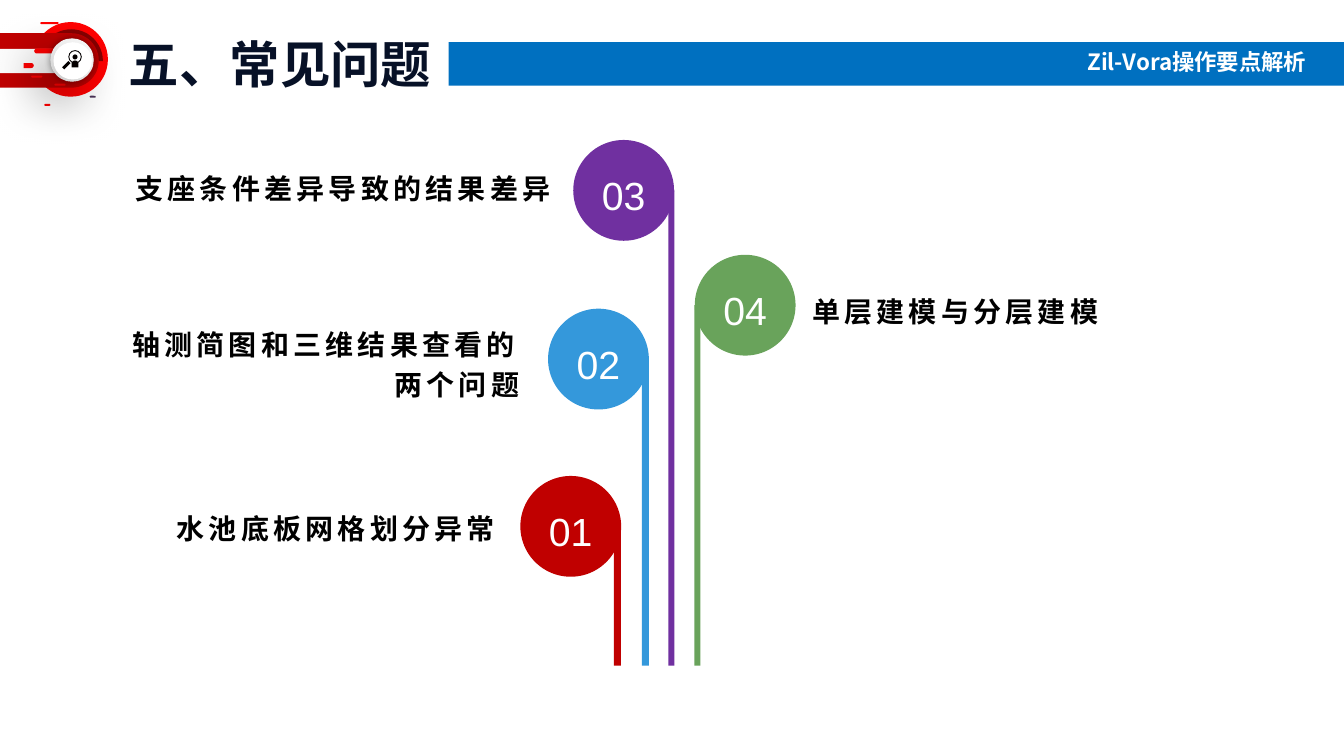
"""Build the agenda slide on common problems, with four numbered markers on stems."""
from dataclasses import dataclass

from lxml.etree import SubElement
from pptx import Presentation
from pptx.dml.color import RGBColor
from pptx.enum.shapes import MSO_SHAPE
from pptx.enum.text import MSO_ANCHOR, PP_ALIGN
from pptx.oxml.ns import qn
from pptx.util import Pt


@dataclass(frozen=True)
class Theme:
    latin: str = "Arial"
    chinese: str = "Noto Sans CJK SC"
    title_size: int = 36
    number_size: int = 28
    label_size: int = 20
    banner_size: int = 16
    title: str = "071127"
    banner: str = "0070C0"
    white: str = "FFFFFF"
    black: str = "000000"
    red: str = "FF0000"
    deep_red: str = "C00000"
    dark_red: str = "860000"
    plum: str = "4A3359"
    slot: str = "FCFCFC"
    icon: str = "040000"
    blue: str = "3498DB"
    purple: str = "7030A0"
    green: str = "69A35B"


theme = Theme()
deck = Presentation()
deck.slide_width, deck.slide_height = Pt(960), Pt(540)
page = deck.slides.add_slide(deck.slide_layouts[6])


def add_filled(kind, frame, color, turn=0, adjustments=()):
    shape = page.shapes.add_shape(kind, *map(Pt, frame))
    shape.shadow.inherit = False
    shape.fill.solid()
    shape.fill.fore_color.rgb = RGBColor.from_string(color)
    shape.line.fill.background()
    shape.rotation = turn
    for index, value in enumerate(adjustments):
        shape.adjustments[index] = value
    return shape


def write(shape, text, size, color, font, align, anchor, bold=True, leading=1.0, tracking=0):
    frame = shape.text_frame
    frame.word_wrap = True
    frame.vertical_anchor = anchor
    para = frame.paragraphs[0]
    para.text = text
    para.alignment = align
    para.line_spacing = leading
    para.font.size = Pt(size)
    para.font.bold = bold
    para.font.name = font
    para.font.color.rgb = RGBColor.from_string(color)
    defaults = para._p.pPr.find(qn("a:defRPr"))
    defaults.set("spc", str(tracking * 100))
    SubElement(defaults, qn("a:ea"), typeface=theme.chinese)


pill, capsule = MSO_SHAPE.ROUNDED_RECTANGLE, MSO_SHAPE.ROUND_2_SAME_RECTANGLE
emblem = [
    (MSO_SHAPE.OVAL, (23.8, 15.8, 53.3, 53.3), theme.red, 0, ()),
    (pill, (64.1, 68.4, 4.3, 1.4), theme.plum, 0, (0.5,)),
    (pill, (31.7, 74.2, 4.3, 1.4), theme.red, 0, (0.5,)),
    (MSO_SHAPE.PIE, (28.1, 20.9, 45.4, 45.4), theme.dark_red, 180, (0, 108)),
    (pill, (28.8, 15.8, 13, 1.4), theme.red, 0, (0.5,)),
    (capsule, (15.8, 7.9, 38.9, 70.6), theme.deep_red, 90, (0.5, 0)),
    (capsule, (20.9, 13.7, 17.3, 59.8), theme.slot, 90, (0.5, 0)),
    (capsule, (18.7, 43.2, 3.6, 7.2), theme.red, 90, (0.5, 0)),
    (pill, (24.5, 34.6, 21.6, 3.6), theme.red, 0, (0.5,)),
    (pill, (22.3, 54, 7.9, 1.4), theme.red, 0, (0.5,)),
    (pill, (38.9, 59.8, 7.9, 1.4), theme.red, 0, (0.5,)),
]
for part in emblem:
    add_filled(*part)

buttons = [((36, 27.4, 31, 31), 40, 5, 0, 0), ((38.2, 30.2, 27.4, 26.6), 60, 37, 16, 130)]
for frame, opacity, blur, distance, angle in buttons:
    button = add_filled(MSO_SHAPE.OVAL, frame, theme.white)
    effects = button._element.spPr.find(qn("a:effectLst"))
    shadow = SubElement(effects, qn("a:outerShdw"), blurRad=str(Pt(blur)),
                        dist=str(Pt(distance)), dir=str(angle * 60000), algn="ctr", rotWithShape="0")
    tint = SubElement(shadow, qn("a:srgbClr"), val=theme.black)
    SubElement(tint, qn("a:alpha"), val=str(opacity * 1000))

title = page.shapes.add_textbox(Pt(85), Pt(20.2), Pt(280), Pt(94.3))
write(title, "五、常见问题", theme.title_size, theme.title, theme.chinese, PP_ALIGN.LEFT, MSO_ANCHOR.TOP)
add_filled(MSO_SHAPE.RECTANGLE, (320.4, 30.2, 639.6, 31), theme.banner)
banner = page.shapes.add_textbox(Pt(750.2), Pt(31), Pt(209.5), Pt(26.6))
write(banner, "Zil-Vora操作要点解析", theme.banner_size, theme.white, theme.chinese,
      PP_ALIGN.CENTER, MSO_ANCHOR.TOP)

seeker = [
    (MSO_SHAPE.OVAL, (51.8, 38.9, 3.6, 3.6), 0, ()),
    (capsule, (51.1, 43.2, 5, 5), 0, (0.5, 0)),
    (MSO_SHAPE.DONUT, (48.8, 35.8, 9.6, 9.6), 0, (0.07,)),
    (MSO_SHAPE.RECTANGLE, (44.2, 45.5, 6.4, 2.2), 315, ()),
]
for kind, frame, turn, adjustments in seeker:
    add_filled(kind, frame, theme.icon, turn, adjustments)

diameter, stem_bottom = 72, 475.5
markers = [
    ("03", theme.purple, 409.5, 100, 477.4, 4.3,
     "支座条件差异导致的结果差异", (85, 110.9, 315.4, 38.9), PP_ALIGN.RIGHT),
    ("02", theme.blue, 391.5, 220.5, 458.6, 5,
     "轴测简图和三维结果查看的两个问题", (78.5, 251.3, 299.5, 38.9), PP_ALIGN.RIGHT),
    ("01", theme.deep_red, 371.7, 340, 438.5, 5,
     "水池底板网格划分异常", (115.2, 354.2, 245.5, 38.9), PP_ALIGN.RIGHT),
    ("04", theme.green, 496.3, 182, 496, 4.3,
     "单层建模与分层建模", (573.1, 198.7, 303.8, 38.9), PP_ALIGN.LEFT),
]
for number, color, left, top, stem_left, stem_width, text, frame, align in markers:
    stem_top = top + diameter / 2
    add_filled(MSO_SHAPE.RECTANGLE, (stem_left, stem_top, stem_width, stem_bottom - stem_top), color)
    circle = add_filled(MSO_SHAPE.OVAL, (left, top, diameter, diameter), color)
    write(circle, number, theme.number_size, theme.white, theme.latin, PP_ALIGN.CENTER,
          MSO_ANCHOR.MIDDLE, bold=False, leading=1.2)
    label = page.shapes.add_textbox(*map(Pt, frame))
    write(label, text, theme.label_size, theme.black, theme.latin, align,
          MSO_ANCHOR.BOTTOM, leading=1.2, tracking=3)

deck.save("out.pptx")
